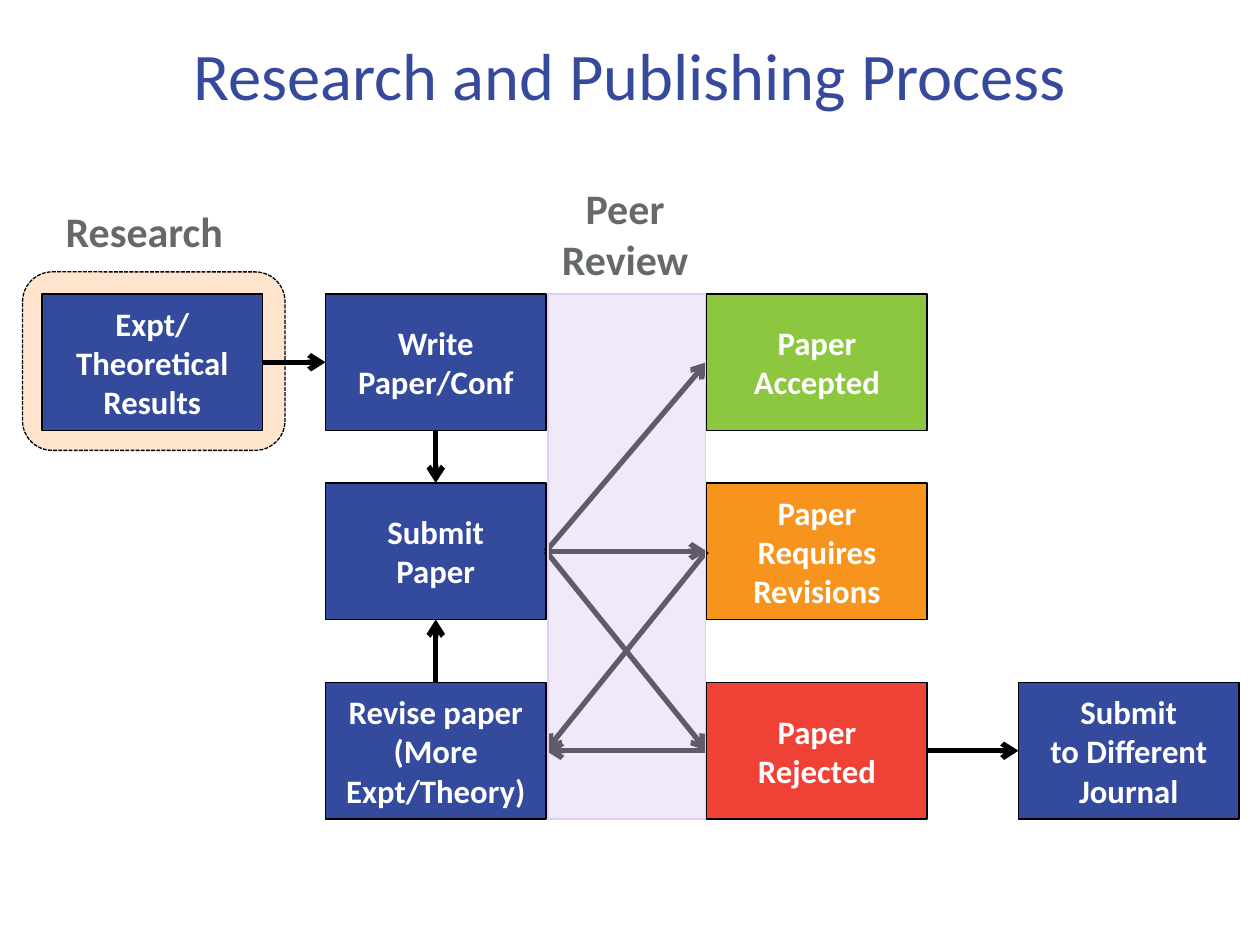
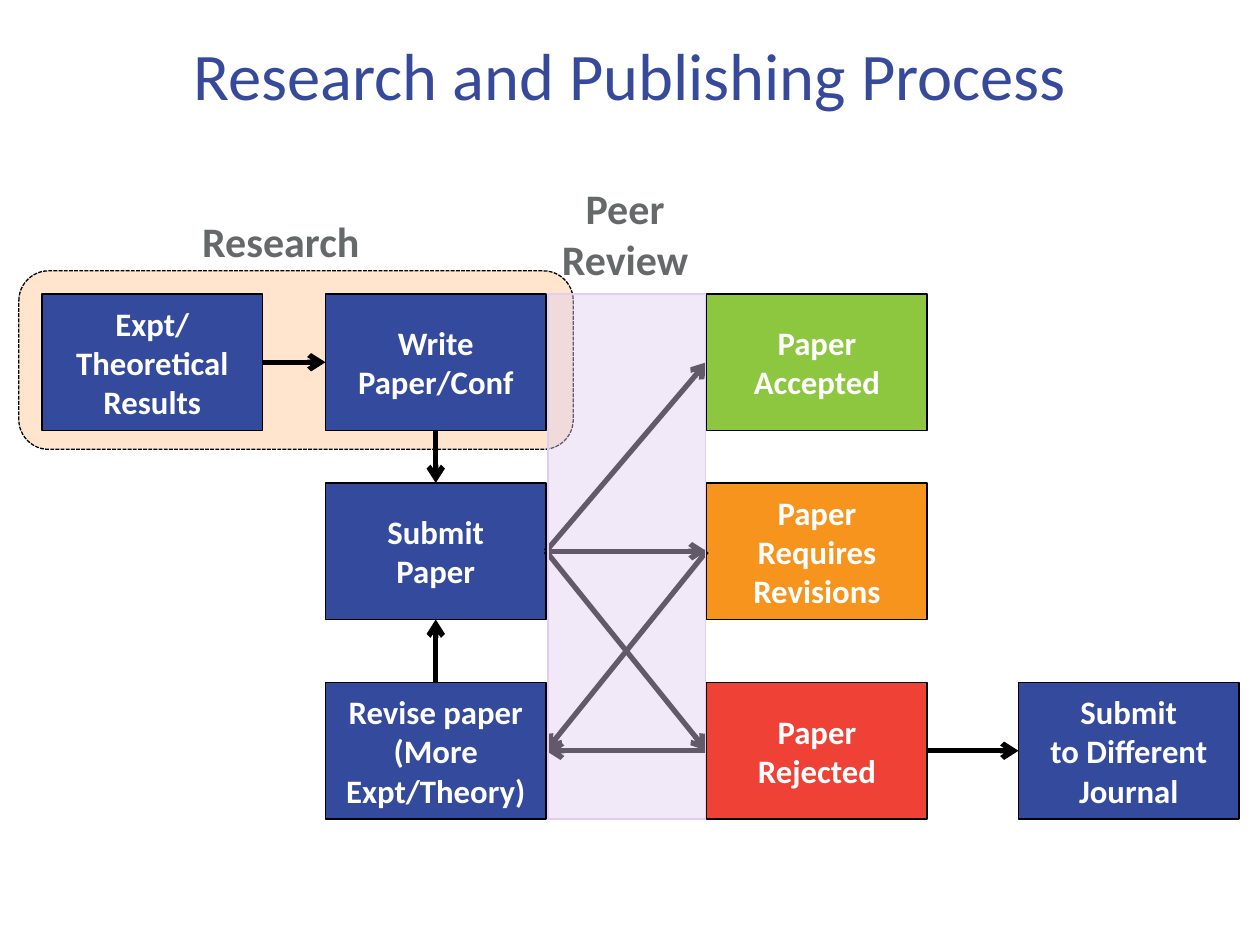
from lxml.etree import SubElement
from pptx import Presentation
from pptx.dml.color import RGBColor
from pptx.enum.dml import MSO_LINE
from pptx.enum.shapes import MSO_CONNECTOR, MSO_SHAPE
from pptx.enum.text import MSO_ANCHOR, MSO_AUTO_SIZE, PP_ALIGN
from pptx.oxml.ns import qn
from pptx.util import Inches, Pt

COLS, ROWS = 24, 18
BOX_W, BOX_H = 4.2, 2.6
BOX_X = [0.8, 6.2, 13.46, 19.4]
BOX_Y = [5.6, 9.2, 13]
TOP, LEFT, BOTTOM, RIGHT = range(4)

BLUE, GREEN, ORANGE, RED = "344A9D", "8DC63F", "F7941D", "EF4136"
TITLE_BLUE, GREY, PEACH, LILAC = "36499B", "66696A", "FFE4CE", "E1CEF0"
BLACK, WHITE = "000000", "FFFFFF"

TITLE_FONT = {"name": "Calibri", "size": Pt(38), "bold": False}
LABEL_FONT = {"name": "Calibri", "size": Pt(24), "bold": True}
BOX_FONT = {"name": "Calibri", "size": Pt(18.7), "bold": True}

BOXES = {
    "results": (0, 0, BLUE, ["Expt/", "Theoretical", "Results"]),
    "draft": (1, 0, BLUE, ["Write", "Paper/Conf"]),
    "submit": (1, 1, BLUE, ["Submit", "Paper"]),
    "revise": (1, 2, BLUE, ["Revise paper", "(More Expt/Theory)"]),
    "accepted": (2, 0, GREEN, ["Paper", "Accepted"]),
    "revisions": (2, 1, ORANGE, ["Paper", "Requires Revisions"]),
    "rejected": (2, 2, RED, ["Paper", "Rejected"]),
    "resubmit": (3, 2, BLUE, ["Submit", "to Different Journal"]),
}
ARROWS = [
    ("results", RIGHT, "draft", LEFT),
    ("draft", BOTTOM, "submit", TOP),
    ("submit", RIGHT, "accepted", LEFT),
    ("submit", RIGHT, "rejected", LEFT),
    ("submit", RIGHT, "revisions", LEFT),
    ("revisions", LEFT, "revise", RIGHT),
    ("revise", TOP, "submit", BOTTOM),
    ("rejected", RIGHT, "resubmit", LEFT),
    ("rejected", LEFT, "revise", RIGHT),
]
RESEARCH_STAGES = [
    {"area": (0.43, 5.18, 5, 3.4), "label": (1, 3.8, 3.5, 1.2)},
    {"area": (0.36, 5.16, 10.56, 3.4), "label": (3.6, 3.98, 3.5, 1.2)},
]


def rgb(value):
    return RGBColor.from_string(value)


def apply(target, values):
    for name, value in values.items():
        setattr(target, name, value)


class Deck:
    def __init__(self):
        self.prs = Presentation()
        apply(self.prs, {"slide_width": Inches(10), "slide_height": Inches(7.5)})
        self.s = None

    def place(self, x, y, w, h):
        col, row = self.prs.slide_width / COLS, self.prs.slide_height / ROWS
        return [round(v) for v in (x * col, y * row, w * col, h * row)]

    def add_lines(self, tf, lines, font, color):
        for i, line in enumerate(lines):
            p = tf.paragraphs[0] if i == 0 else tf.add_paragraph()
            p.alignment = PP_ALIGN.CENTER
            r = p.add_run()
            r.text = line
            apply(r.font, font)
            r.font.color.rgb = rgb(color)

    def slide(self, title):
        self.s = self.prs.slides.add_slide(self.prs.slide_layouts[5])
        sp = self.s.shapes.title
        apply(sp, dict(zip(("left", "top", "width", "height"),
                           self.place(1.8, 0.65, 20.4, 1.66))))
        tf = sp.text_frame
        apply(tf, {"margin_top": Inches(0.1), "margin_bottom": Inches(0.05),
                   "vertical_anchor": MSO_ANCHOR.MIDDLE,
                   "auto_size": MSO_AUTO_SIZE.NONE})
        self.add_lines(tf, [title], TITLE_FONT, TITLE_BLUE)
        tf.paragraphs[0].line_spacing = Pt(38)

    def shape(self, kind, area, fill, line=BLACK, alpha=None, dash=None):
        sp = self.s.shapes.add_shape(kind, *self.place(*area))
        sp.shadow.inherit = False
        sp.fill.solid()
        sp.fill.fore_color.rgb = rgb(fill)
        sp.line.color.rgb = rgb(line)
        apply(sp.line, {"width": Pt(0.75), "dash_style": dash})
        if alpha:
            clr = sp._element.spPr.find(qn("a:solidFill")).find(qn("a:srgbClr"))
            SubElement(clr, qn("a:alpha"), val=str(alpha * 1000))
        return sp

    def box(self, col, row, fill, lines):
        sp = self.shape(MSO_SHAPE.RECTANGLE,
                        (BOX_X[col], BOX_Y[row], BOX_W, BOX_H), fill)
        apply(sp.text_frame, {"word_wrap": True,
                              "vertical_anchor": MSO_ANCHOR.MIDDLE})
        self.add_lines(sp.text_frame, lines, BOX_FONT, WHITE)
        return sp

    def arrow(self, start, start_side, end, end_side):
        cxn = self.s.shapes.add_connector(MSO_CONNECTOR.STRAIGHT, 0, 0, 0, 0)
        cxn.begin_connect(start, start_side)
        cxn.end_connect(end, end_side)
        cxn.line.color.rgb = rgb(BLACK)
        cxn.line.width = Pt(3)
        ln = cxn._element.spPr.find(qn("a:ln"))
        SubElement(ln, qn("a:tailEnd"), type="arrow")
        SubElement(cxn._element.spPr, qn("a:effectLst"))

    def label(self, area, lines):
        tf = self.s.shapes.add_textbox(*self.place(*area)).text_frame
        apply(tf, {"word_wrap": False, "auto_size": MSO_AUTO_SIZE.SHAPE_TO_FIT_TEXT})
        self.add_lines(tf, lines, LABEL_FONT, GREY)


def main():
    deck = Deck()
    for stage in RESEARCH_STAGES:
        deck.slide("Research and Publishing Process")
        deck.shape(MSO_SHAPE.ROUNDED_RECTANGLE, stage["area"], PEACH,
                   dash=MSO_LINE.SQUARE_DOT)
        boxes = {name: deck.box(*box) for name, box in BOXES.items()}
        for start, start_side, end, end_side in ARROWS:
            deck.arrow(boxes[start], start_side, boxes[end], end_side)
        deck.shape(MSO_SHAPE.RECTANGLE, (10.44, BOX_Y[0], 3, 10), LILAC,
                   line=LILAC, alpha=44)
        deck.label(stage["label"], ["Research"])
        deck.label((10.44, 3.36, 2.93, 2.18), ["Peer", "Review"])
    deck.prs.save("out.pptx")


if __name__ == "__main__":
    main()
